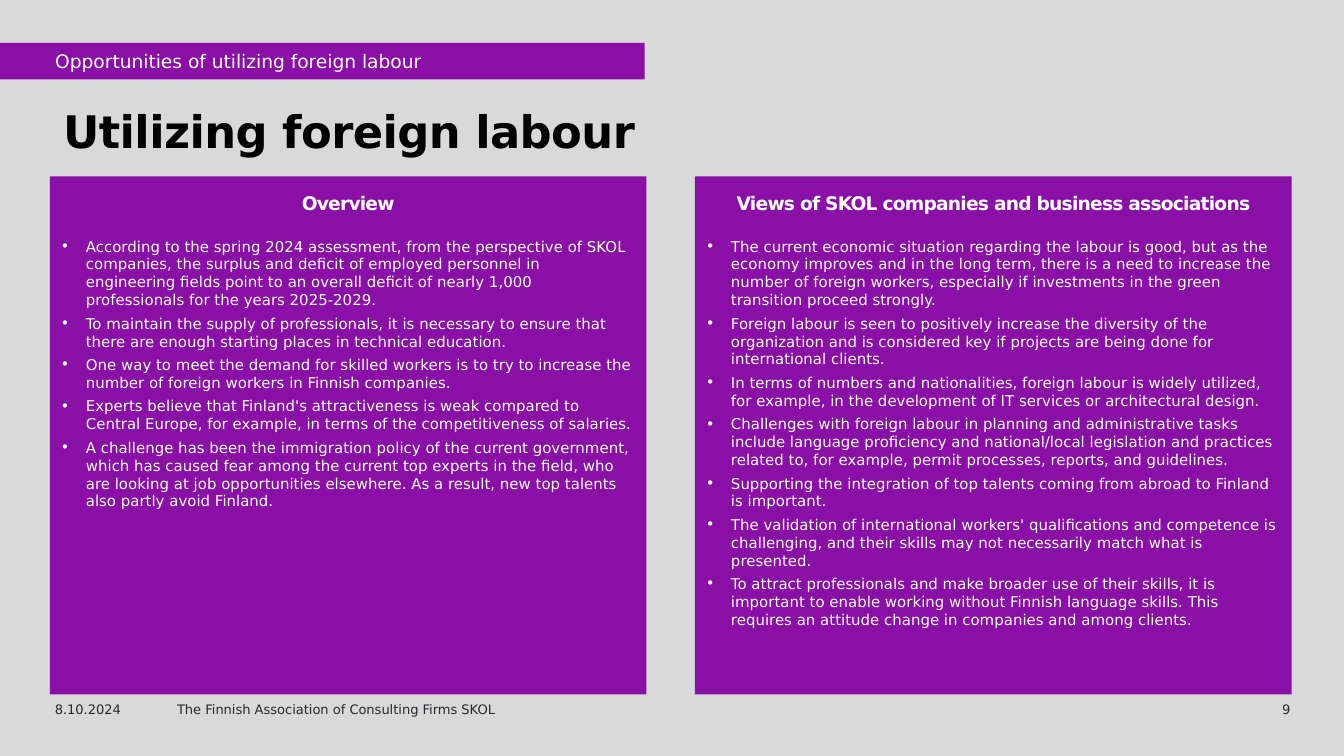
from lxml import etree
from pptx import Presentation
from pptx.dml.color import RGBColor
from pptx.enum import shapes, text
from pptx.oxml import ns
from pptx.util import Pt

FONT = "DejaVu Sans"
PURPLE = RGBColor(0x8A, 0x0F, 0xA6)
GREY = RGBColor(0xD9, 0xD9, 0xD9)
WHITE = RGBColor(0xFF, 0xFF, 0xFF)
BLACK = RGBColor(0, 0, 0)
FOOTER_COLOUR = RGBColor(0x29, 0x28, 0x2E)

SECTION = "Opportunities of utilizing foreign labour"
TITLE = "Utilizing foreign labour"
PANELS = [
    ("Overview", [
        "According to the spring 2024 assessment, from the perspective of SKOL companies, the surplus and deficit of employed personnel in engineering fields point to an overall deficit of nearly 1,000 professionals for the years 2025-2029.",
        "To maintain the supply of professionals, it is necessary to ensure that there are enough starting places in technical education.",
        "One way to meet the demand for skilled workers is to try to increase the number of foreign workers in Finnish companies.",
        "Experts believe that Finland's attractiveness is weak compared to Central Europe, for example, in terms of the competitiveness of salaries.",
        "A challenge has been the immigration policy of the current government, which has caused fear among the current top experts in the field, who are looking at job opportunities elsewhere. As a result, new top talents also partly avoid Finland.",
    ]),
    ("Views of SKOL companies and business associations", [
        "The current economic situation regarding the labour is good, but as the economy improves and in the long term, there is a need to increase the number of foreign workers, especially if investments in the green transition proceed strongly.",
        "Foreign labour is seen to positively increase the diversity of the organization and is considered key if projects are being done for international clients.",
        "In terms of numbers and nationalities, foreign labour is widely utilized, for example, in the development of IT services or architectural design.",
        "Challenges with foreign labour in planning and administrative tasks include language proficiency and national/local legislation and practices related to, for example, permit processes, reports, and guidelines.",
        "Supporting the integration of top talents coming from abroad to Finland is important.",
        "The validation of international workers' qualifications and competence is challenging, and their skills may not necessarily match what is presented.",
        "To attract professionals and make broader use of their skills, it is important to enable working without Finnish language skills. This requires an attitude change in companies and among clients.",
    ]),
]
# text, left, width, alignment
FOOTERS = [
    ("8.10.2024", 22.3, 72, text.PP_ALIGN.LEFT),
    ("The Finnish Association of Consulting Firms SKOL", 87.8, 259, text.PP_ALIGN.LEFT),
    ("9", 630.7, 67.7, text.PP_ALIGN.RIGHT),
]

PANEL_LEFT, PANEL_TOP = 26.7, 94.5
PANEL_WIDTH, PANEL_HEIGHT = 319.6, 277.5
PANEL_STEP = 345.6
HEADING_HEIGHT = 29
BULLET_INDENT = 13.5


def add_rectangle(slide, left, top, width, height):
    shape = slide.shapes.add_shape(
        shapes.MSO_SHAPE.RECTANGLE, Pt(left), Pt(top), Pt(width), Pt(height))
    shape.shadow.inherit = False
    shape.fill.solid()
    shape.fill.fore_color.rgb = PURPLE
    shape.line.fill.background()
    return shape


def add_text_frame(slide, left, top, width, height, side_inset=7.2,
                   anchor=text.MSO_ANCHOR.TOP):
    box = slide.shapes.add_textbox(Pt(left), Pt(top), Pt(width), Pt(height))
    frame = box.text_frame
    frame.word_wrap = True
    frame.margin_left = frame.margin_right = Pt(side_inset)
    frame.vertical_anchor = anchor
    return frame


def write(paragraph, words, size, colour, bold=False, spacing=0,
          align=text.PP_ALIGN.LEFT):
    """Add one run; spacing is the letter spacing in points."""
    paragraph.alignment = align
    run = paragraph.add_run()
    run.text = words
    run.font.name = FONT
    run.font.size = Pt(size)
    run.font.bold = bold
    run.font.color.rgb = colour
    if spacing:
        run.font._element.set("spc", str(round(spacing * 100)))


def indent(paragraph, left, first=0, bullet=None):
    properties = paragraph._p.get_or_add_pPr()
    properties.set("marL", str(Pt(left)))
    properties.set("indent", str(Pt(first)))
    if bullet:
        font = etree.SubElement(properties, ns.qn("a:buFont"))
        font.set("typeface", FONT)
        etree.SubElement(properties, ns.qn("a:buChar")).set("char", bullet)


def add_panel(slide, left, heading, points):
    add_rectangle(slide, left, PANEL_TOP, PANEL_WIDTH, PANEL_HEIGHT)
    frame = add_text_frame(slide, left, PANEL_TOP, PANEL_WIDTH, HEADING_HEIGHT,
                           2.9, text.MSO_ANCHOR.MIDDLE)
    write(frame.paragraphs[0], heading, 10, WHITE, True, -0.4,
          text.PP_ALIGN.CENTER)

    frame = add_text_frame(slide, left, PANEL_TOP + HEADING_HEIGHT, PANEL_WIDTH,
                           PANEL_HEIGHT - HEADING_HEIGHT, 5.8)
    for number, point in enumerate(points):
        paragraph = frame.add_paragraph() if number else frame.paragraphs[0]
        indent(paragraph, BULLET_INDENT, -BULLET_INDENT, "•")
        paragraph.space_after = Pt(3)
        write(paragraph, point, 8, WHITE)


def main():
    presentation = Presentation()
    presentation.slide_width, presentation.slide_height = Pt(720), Pt(405)
    slide = presentation.slides.add_slide(presentation.slide_layouts[6])
    slide.background.fill.solid()
    slide.background.fill.fore_color.rgb = GREY

    banner = add_rectangle(slide, 0, 23, 345.4, 19.6)
    banner.text_frame.word_wrap = True
    section = banner.text_frame.paragraphs[0]
    indent(section, 22.5)
    write(section, SECTION, 10, WHITE)

    title = add_text_frame(slide, PANEL_LEFT, 54, 669, 29).paragraphs[0]
    title.line_spacing = Pt(27)
    write(title, TITLE, 24, BLACK, True, -0.3)

    for number, (heading, points) in enumerate(PANELS):
        add_panel(slide, PANEL_LEFT + number * PANEL_STEP, heading, points)

    for words, left, width, align in FOOTERS:
        frame = add_text_frame(slide, left, 372.2, width, 13)
        write(frame.paragraphs[0], words, 7, FOOTER_COLOUR, align=align)

    presentation.save("out.pptx")


if __name__ == "__main__":
    main()
